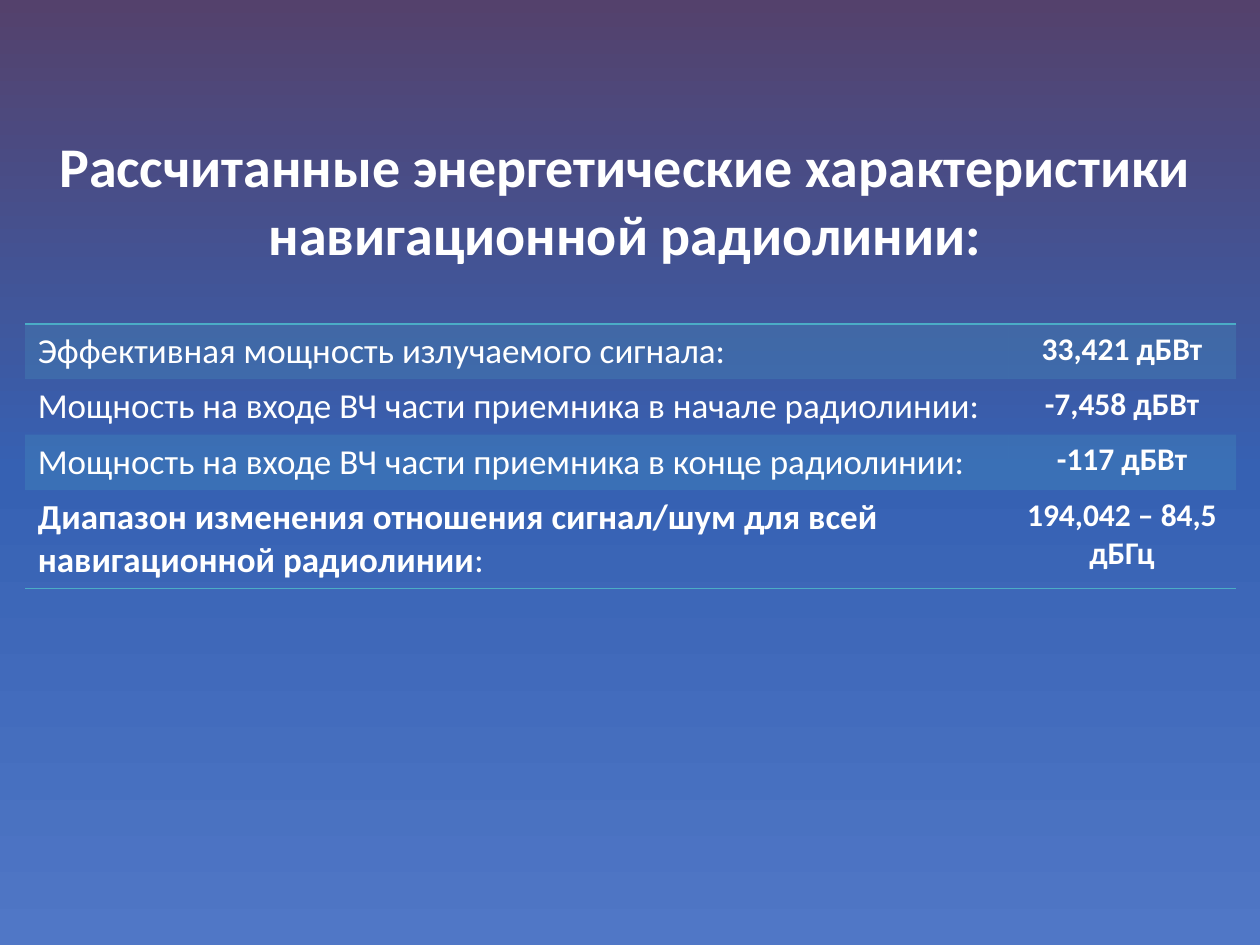
from copy import deepcopy
from dataclasses import dataclass
from typing import Any

from lxml import etree
from pptx import Presentation
from pptx import util as u
from pptx.dml import color
from pptx.enum import text
from pptx.oxml import ns

WIDTH, HEIGHT = u.Inches(10), u.Inches(7.5)
CENTER, LEFT = text.PP_ALIGN.CENTER, text.PP_ALIGN.LEFT
PLAIN_TABLE = "{2D5ABB26-0587-4C30-8999-92F81FD0307C}"

ROWS = [
    ([("Эффективная мощность излучаемого сигнала:", False)], "33,421 дБВт"),
    ([("Мощность на входе ВЧ части приемника в начале радиолинии:", False)], "-7,458 дБВт"),
    ([("Мощность на входе ВЧ части приемника в конце радиолинии:", False)], "-117 дБВт"),
    (
        [
            ("Диапазон изменения отношения сигнал/шум для всей навигационной радиолинии", True),
            (":", False),
        ],
        "194,042 – 84,5 дБГц",
    ),
]


def rgb(value):
    return color.RGBColor.from_string(value)


@dataclass
class Sheet:
    page: Any
    font: str = "Calibri"
    ink: str = "FFFFFF"
    accent: str = "4BACC6"

    def background(self, stops):
        fill = self.page.background.fill
        fill.gradient()
        fill.gradient_angle = 270
        stop_list = next(self.page.element.iter(ns.qn("a:gsLst")))
        while len(stop_list) < len(stops):
            stop_list.append(deepcopy(stop_list[0]))
        for stop, (position, value) in zip(fill.gradient_stops, stops):
            stop.position = position
            stop.color.rgb = rgb(value)

    def set_text(self, frame, spans, size, align):
        para = frame.paragraphs[0]
        para.alignment = align
        para.font.name = self.font
        para.font.size = u.Pt(size)
        para.font.color.rgb = rgb(self.ink)
        para.font.bold = spans[0][1]
        for words, bold in spans:
            span = para.add_run()
            span.text = words
            if bold != spans[0][1]:
                span.font.bold = bold

    def title(self, words, left, top, width, height):
        box = self.page.shapes.add_textbox(
            int(left * WIDTH), int(top * HEIGHT), int(width * WIDTH), int(height * HEIGHT)
        )
        box.text_frame.word_wrap = True
        box.text_frame.vertical_anchor = text.MSO_ANCHOR.MIDDLE
        self.set_text(box.text_frame, [(words, True)], 32, CENTER)

    def tint(self, cell):
        cell.fill.solid()
        cell.fill.fore_color.rgb = rgb(self.accent)
        shade = next(cell._tc.tcPr.iter(ns.qn("a:srgbClr")))
        etree.SubElement(shade, ns.qn("a:alpha"), val="20000")

    def rule(self, cell, edge):
        line = etree.Element(ns.qn(edge), w=str(u.Pt(1)))
        fill = etree.SubElement(line, ns.qn("a:solidFill"))
        etree.SubElement(fill, ns.qn("a:srgbClr"), val=self.accent)
        cell._tc.get_or_add_tcPr().insert(0, line)

    def table(self, rows, left, top, columns, heights):
        table = self.page.shapes.add_table(
            len(rows), len(columns), int(left * WIDTH), int(top * HEIGHT),
            int(sum(columns) * WIDTH), int(sum(heights) * HEIGHT),
        ).table
        table.first_row = table.horz_banding = False
        next(table._tbl.iter(ns.qn("a:tableStyleId"))).text = PLAIN_TABLE
        for column, share in zip(table.columns, columns):
            column.width = int(share * WIDTH)
        for index, (row, share, (label, value)) in enumerate(zip(table.rows, heights, rows)):
            row.height = int(share * HEIGHT)
            label_cell, value_cell = row.cells
            self.set_text(label_cell.text_frame, label, 20, LEFT)
            self.set_text(value_cell.text_frame, [(value, True)], 18, CENTER)
            for cell in (label_cell, value_cell):
                if index % 2 == 0:
                    self.tint(cell)
                else:
                    cell.fill.background()
                if index == 0:
                    self.rule(cell, "a:lnT")
                if index == len(rows) - 1:
                    self.rule(cell, "a:lnB")


def main():
    deck = Presentation()
    deck.slide_width, deck.slide_height = WIDTH, HEIGHT
    sheet = Sheet(deck.slides.add_slide(deck.slide_layouts[6]))
    sheet.background([(0, "54416C"), (0.5, "3661B3"), (1, "5077C6")])
    sheet.title(
        "Рассчитанные энергетические характеристики навигационной радиолинии:",
        0.028, 0.99 / 7.5, 0.937, 1.18 / 7.5,
    )
    sheet.table(ROWS, 0.02, 2.57 / 7.5, [0.78, 0.181], [0.44 / 7.5] * 3 + [0.78 / 7.5])
    deck.save("out.pptx")


if __name__ == "__main__":
    main()
